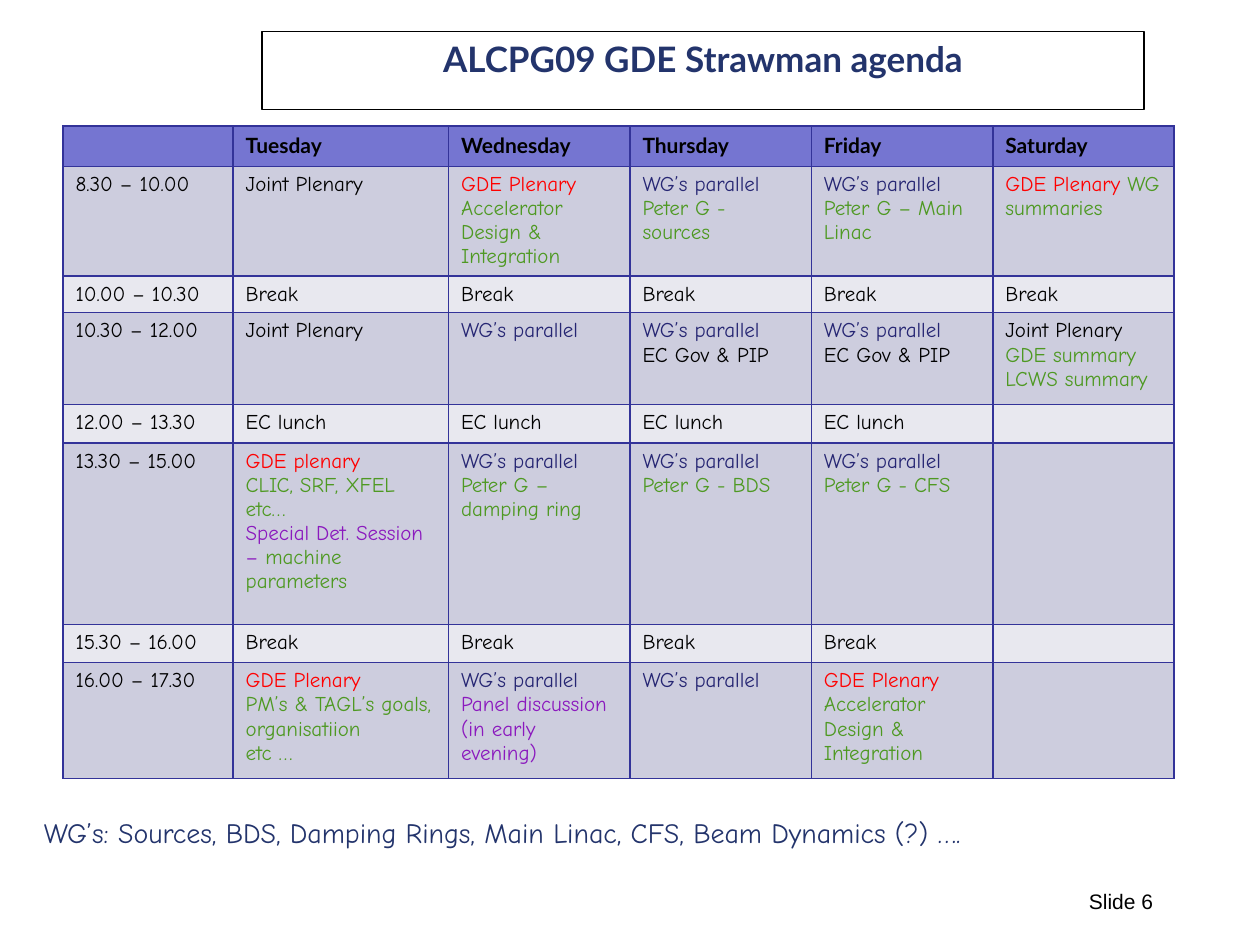
from dataclasses import dataclass

from lxml import etree
from pptx import Presentation
from pptx.dml.color import RGBColor
from pptx.enum.text import MSO_ANCHOR, MSO_AUTO_SIZE, PP_ALIGN
from pptx.oxml.ns import qn
from pptx.util import Inches, Pt

TOP = MSO_ANCHOR.TOP
NO_FIT = MSO_AUTO_SIZE.NONE
LEFT, CENTER, RIGHT = PP_ALIGN.LEFT, PP_ALIGN.CENTER, PP_ALIGN.RIGHT


@dataclass(frozen=True)
class Theme:
    heading_font: str = "Lato"
    body_font: str = "Comic Neue"
    footer_font: str = "Arial"
    title_size: int = 20
    note_size: int = 16
    table_size: int = 12
    footer_size: int = 12
    ink: str = "23346C"
    black: str = "000000"
    plenary: str = "FF0000"
    parallel: str = "262673"
    topic: str = "4E9922"
    special: str = "8B19BE"
    border: str = "333399"
    header_fill: str = "7575D1"
    session_fill: str = "CDCDDE"
    pause_fill: str = "E8E8EF"


T = Theme()

COL_WIDTHS = [1.35, 1.71] + [1.44] * 4
PAUSE_HEIGHT = 0.29
DAYS = ["", "Tuesday", "Wednesday", "Thursday", "Friday", "Saturday"]


def black(text):
    return [(text, T.black)]


def parallel(*paragraphs):
    return [[("WG’s parallel", T.parallel)], *paragraphs]


def topic(text):
    return [(text, T.topic)]


def plenary(text):
    return [[("GDE Plenary ", T.plenary), (text, T.topic)]]


JOINT = [black("Joint Plenary")]
GOVERNANCE = parallel(black("EC Gov & PIP"))
DESIGN = plenary("Accelerator Design & Integration")


def pause(time, text, count):
    cells = [[black(text)]] * count + [[]] * (5 - count)
    return time, PAUSE_HEIGHT, T.pause_fill, cells


def session(time, height, *cells):
    return time, height, T.session_fill, cells


AGENDA = [
    session("8.30 – 10.00", 0.87, JOINT, DESIGN,
            parallel(topic("Peter G - sources")),
            parallel(topic("Peter G – Main Linac")),
            plenary("WG summaries")),
    pause("10.00 – 10.30", "Break", 5),
    session("10.30 – 12.00", 0.73, JOINT, parallel(), GOVERNANCE, GOVERNANCE,
            JOINT + [topic("GDE summary"), topic("LCWS summary")]),
    pause("12.00 – 13.30", "EC lunch", 4),
    session("13.30 – 15.00", 1.44,
            [[("GDE plenary", T.plenary)],
             topic("CLIC, SRF, XFEL etc…"),
             [("Special Det. Session – ", T.special),
              ("machine parameters", T.topic)]],
            parallel(topic("Peter G – damping ring")),
            parallel(topic("Peter G - BDS")),
            parallel(topic("Peter G - CFS")), []),
    pause("15.30 – 16.00", "Break", 4),
    session("16.00 – 17.30", 0.92,
            [[("GDE Plenary", T.plenary)],
             topic("PM’s & TAGL’s goals, organisatiion"), topic("etc …")],
            parallel([("Panel discussion (in early evening)", T.special)]),
            parallel(), DESIGN, []),
]


def add_run(p, text, font, size, color, bold=False):
    r = p.add_run()
    r.text = text
    r.font.name = font
    r.font.size = Pt(size)
    r.font.bold = bold
    r.font.color.rgb = RGBColor.from_string(color)


def set_frame(tf, align):
    tf.word_wrap = True
    tf.auto_size = NO_FIT
    tf.vertical_anchor = TOP
    p = tf.paragraphs[0]
    p.alignment = align
    return p


def add_title(s, text):
    sp = s.shapes.title
    sp.left, sp.top = Inches(2.08), Inches(0.25)
    sp.width, sp.height = Inches(7), Inches(0.62)
    sp.line.color.rgb = RGBColor.from_string(T.black)
    sp.line.width = Pt(0.75)
    p = set_frame(sp.text_frame, CENTER)
    add_run(p, text, T.heading_font, T.title_size, T.ink, True)


def add_text(s, box, text, font, size, color, align=LEFT):
    sp = s.shapes.add_textbox(*(Inches(v) for v in box))
    p = set_frame(sp.text_frame, align)
    add_run(p, text, font, size, color)
    return p


def hang(p, indent):
    pPr = p._p.get_or_add_pPr()
    pPr.set("marL", str(Inches(indent)))
    pPr.set("indent", str(-Inches(indent)))


def set_borders(cell):
    tcPr = cell._tc.get_or_add_tcPr()
    for side in ("a:lnL", "a:lnR", "a:lnT", "a:lnB"):
        ln = etree.SubElement(tcPr, qn(side), w=str(Pt(1)))
        fill = etree.SubElement(ln, qn("a:solidFill"))
        etree.SubElement(fill, qn("a:srgbClr"), val=T.border)


def fill_cell(cell, paragraphs, fill, font, bold=False):
    set_borders(cell)
    cell.fill.solid()
    cell.fill.fore_color.rgb = RGBColor.from_string(fill)
    tf = cell.text_frame
    for i, runs in enumerate(paragraphs):
        p = tf.add_paragraph() if i else tf.paragraphs[0]
        for text, color in runs:
            add_run(p, text, font, T.table_size, color, bold)
    if not paragraphs:
        etree.SubElement(tf.paragraphs[0]._p, qn("a:endParaRPr"),
                         sz=str(T.table_size * 100))


def add_agenda(s):
    heights = [0.32] + [row[1] for row in AGENDA]
    frame = s.shapes.add_table(len(heights), len(COL_WIDTHS), Inches(0.5), Inches(1),
                               Inches(sum(COL_WIDTHS)), Inches(sum(heights)))
    table = frame.table
    for column, width in zip(table.columns, COL_WIDTHS):
        column.width = Inches(width)
    for row, height in zip(table.rows, heights):
        row.height = Inches(height)
    for cell, day in zip(table.rows[0].cells, DAYS):
        fill_cell(cell, [black(day)] if day else [], T.header_fill, T.heading_font, True)
    for r, (time, _, fill, sessions) in enumerate(AGENDA, 1):
        for cell, content in zip(table.rows[r].cells, [[black(time)], *sessions]):
            fill_cell(cell, content, fill, T.body_font)


def main():
    prs = Presentation()
    prs.slide_width, prs.slide_height = Inches(10), Inches(7.5)
    s = prs.slides.add_slide(prs.slide_layouts[5])
    add_title(s, "ALCPG09 GDE Strawman agenda")
    p = add_text(s, (0.25, 6.42, 9.08, 0.42),
                 "WG’s: Sources, BDS, Damping Rings, Main Linac, CFS, Beam Dynamics (?) ….",
                 T.body_font, T.note_size, T.ink)
    hang(p, 0.38)
    add_text(s, (7.17, 7, 2.08, 0.5), "Slide 6",
             T.footer_font, T.footer_size, T.black, RIGHT)
    add_agenda(s)
    prs.save("out.pptx")


if __name__ == "__main__":
    main()
